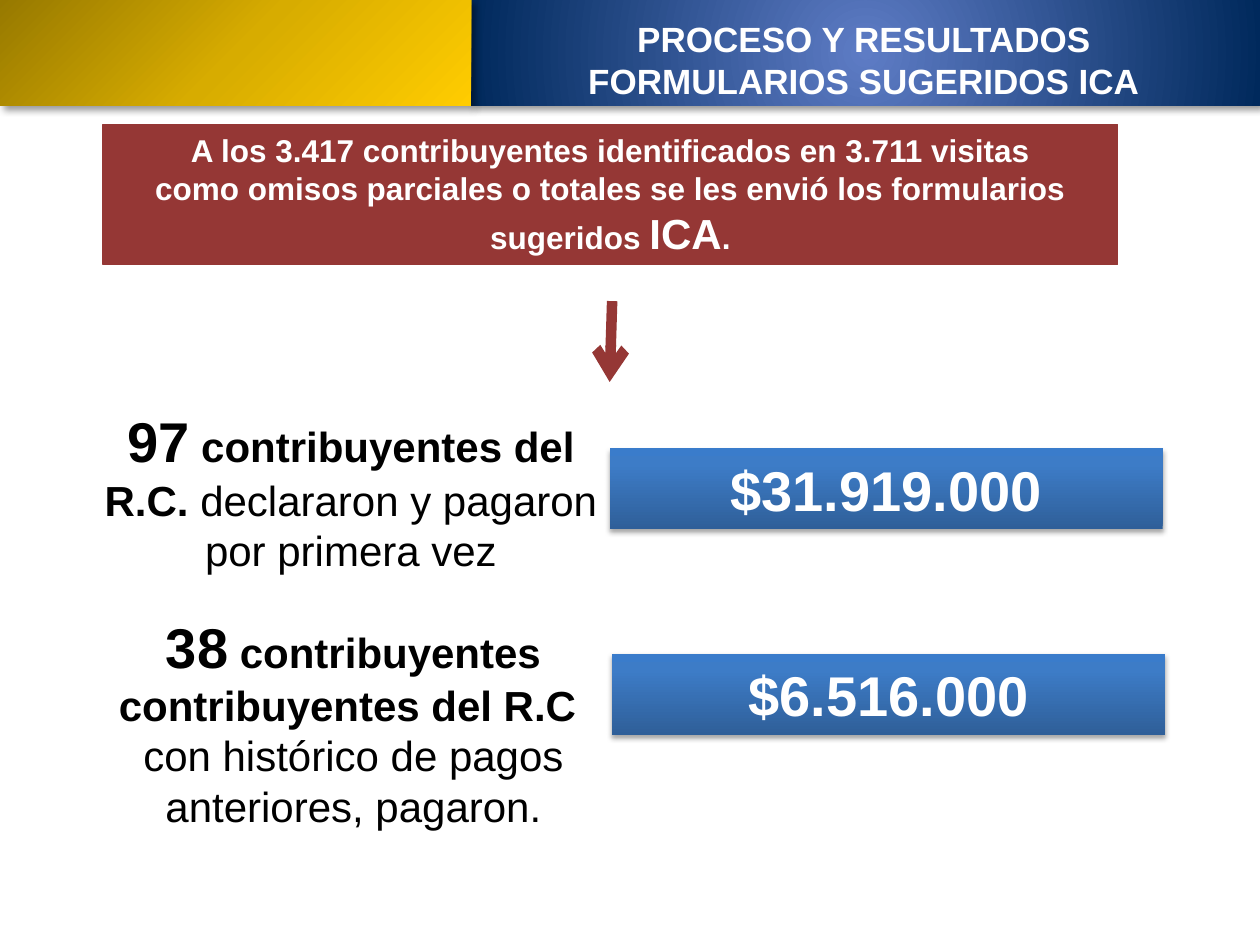
from pptx import Presentation
from pptx.dml.color import RGBColor
from pptx.enum.shapes import MSO_CONNECTOR as Connector, MSO_SHAPE as Shape
from pptx.enum.text import MSO_ANCHOR as Anchor, MSO_AUTO_SIZE as AutoSize, PP_ALIGN as Align
from pptx.oxml.ns import qn
from pptx.util import Cm, Pt
from lxml.etree import SubElement

WHITE = RGBColor(0xFF, 0xFF, 0xFF)
BLACK = RGBColor(0x00, 0x00, 0x00)
RED = RGBColor(0x95, 0x37, 0x35)
NAVY = RGBColor(0x00, 0x29, 0x5C)
SOFT_BLUE = RGBColor(0x5E, 0x7C, 0xC5)
DARK_GOLD = RGBColor(0x97, 0x79, 0x00)
MID_GOLD = RGBColor(0xD7, 0xAC, 0x00)
GOLD = RGBColor(0xFF, 0xCC, 0x00)
BAR_DARK = RGBColor(0x2F, 0x5F, 0x99)
BAR_MID = RGBColor(0x3D, 0x7C, 0xC7)
BAR_LIGHT = RGBColor(0x3A, 0x7C, 0xCB)

BAR_STOPS = [(0, BAR_DARK), (80, BAR_MID), (100, BAR_LIGHT)]
# Shadow: opacity %, blur pt, distance pt, angle
BAND_SHADOW = (40, 4, 3, 45)
BAR_SHADOW = (35, 3.1, 1.8, 90)


def add_xml(parent, tag, **attributes):
    return SubElement(parent, qn(tag), {k: str(v) for k, v in attributes.items()})


class SlideBuilder:
    font = "Arial"

    def __init__(self, slide):
        self.slide = slide

    def add_runs(self, frame, paragraphs, color):
        """Each paragraph is a list of runs: (text, size, bold)."""
        frame.word_wrap = True
        for i, runs in enumerate(paragraphs):
            paragraph = frame.paragraphs[0] if i == 0 else frame.add_paragraph()
            paragraph.alignment = Align.CENTER
            for text, size, bold in runs:
                run = paragraph.add_run()
                run.text = text
                run.font.name = self.font
                run.font.size = Pt(size)
                run.font.bold = bold
                run.font.color.rgb = color

    def text(self, left, top, width, height, paragraphs, color=BLACK):
        box = self.slide.shapes.add_textbox(Cm(left), Cm(top), Cm(width), Cm(height))
        self.add_runs(box.text_frame, paragraphs, color)
        box.text_frame.auto_size = AutoSize.SHAPE_TO_FIT_TEXT
        return box

    def box(self, left, top, width, height, paragraphs=()):
        box = self.slide.shapes.add_shape(
            Shape.RECTANGLE, Cm(left), Cm(top), Cm(width), Cm(height))
        box.shadow.inherit = False
        box.line.fill.background()
        box.text_frame.vertical_anchor = Anchor.MIDDLE
        self.add_runs(box.text_frame, paragraphs, WHITE)
        return box

    def solid_box(self, *place, paragraphs, color):
        box = self.box(*place, paragraphs)
        box.fill.solid()
        box.fill.fore_color.rgb = color
        box.line.color.rgb = color
        box.line.width = Pt(0.75)

    def gradient_box(self, *place, stops, shadow, focus=None, paragraphs=()):
        """focus is the centre of a round gradient in %; without it, bottom to top."""
        properties = self.box(*place, paragraphs)._element.spPr
        gradient = add_xml(properties, "a:gradFill", rotWithShape=1)
        properties.find(qn("a:prstGeom")).addnext(gradient)
        stop_list = add_xml(gradient, "a:gsLst")
        for position, color in stops:
            stop = add_xml(stop_list, "a:gs", pos=position * 1000)
            add_xml(stop, "a:srgbClr", val=color)
        if focus is None:
            add_xml(gradient, "a:lin", ang=270 * 60000, scaled=0)
        else:
            start, end = focus * 1000, (100 - focus) * 1000
            circle = add_xml(gradient, "a:path")
            circle.set("path", "circle")
            add_xml(circle, "a:fillToRect", l=start, t=start, r=end, b=end)
        opacity, blur, distance, angle = shadow
        outer = add_xml(properties.find(qn("a:effectLst")), "a:outerShdw",
                        blurRad=Pt(blur), dist=Pt(distance),
                        dir=angle * 60000, rotWithShape=0)
        shade = add_xml(outer, "a:srgbClr", val=BLACK)
        add_xml(shade, "a:alpha", val=opacity * 1000)

    def arrow(self, x1, y1, x2, y2, color, width):
        arrow = self.slide.shapes.add_connector(
            Connector.STRAIGHT, Cm(x1), Cm(y1), Cm(x2), Cm(y2))
        arrow.line.color.rgb = color
        arrow.line.width = Pt(width)
        properties = arrow._element.spPr
        add_xml(properties.find(qn("a:ln")), "a:tailEnd", type="arrow")
        add_xml(properties, "a:effectLst")


def main():
    deck = Presentation()
    deck.slide_width, deck.slide_height = Cm(25.4), Cm(19.05)
    page = SlideBuilder(deck.slides.add_slide(deck.slide_layouts[6]))

    # Header bands
    split, band_height = 9.5, 2.13
    page.gradient_box(split, 0, 25.4 - split, band_height, focus=50,
                      stops=[(0, SOFT_BLUE), (100, NAVY)], shadow=BAND_SHADOW)
    page.gradient_box(0, 0, split, band_height, focus=0, shadow=BAND_SHADOW,
                      stops=[(0, DARK_GOLD), (50, MID_GOLD), (100, GOLD)])

    # Title
    title = page.text(11.56, 0.23, 11.71, 1.96, [
        [("PROCESO Y RESULTADOS", 20, True)],
        [("FORMULARIOS SUGERIDOS ICA", 20, True)],
    ], WHITE)
    title.text_frame.word_wrap = False

    # Forms sent, and the arrow to the results
    page.solid_box(2.08, 2.51, 20.45, 2.82, color=RED, paragraphs=[
        [("A los 3.417 contribuyentes identificados en 3.711 visitas", 18, True)],
        [("como omisos parciales o totales se les envió los formularios sugeridos ", 18, True),
         ("ICA", 24, True), (".", 18, True)],
    ])
    page.arrow(12.34, 6.07, 12.29, 7.7, RED, 6)

    # Results: who paid, and how much
    results = [
        (3.68, "$31.919.000", [
            [("97", 32, True), (" contribuyentes del R.C. ", 24, True),
             ("declararon y pagaron por primera vez", 24, False)]]),
        (4.7, "$6.516.000", [
            [("38", 32, True), (" contribuyentes contribuyentes del R.C ", 24, True)],
            [("con histórico de pagos anteriores, pagaron.", 24, False)]]),
    ]
    for row, (height, amount, payers) in enumerate(results):
        shift, drop = row * 0.05, row * 4.14
        page.text(1.5 + shift, 8.08 + drop, 11.15, height, payers)
        page.gradient_box(12.29 + shift, 9.04 + drop, 11.15, 1.63,
                          stops=BAR_STOPS, shadow=BAR_SHADOW,
                          paragraphs=[[(amount, 32, True)]])

    deck.save("out.pptx")


if __name__ == "__main__":
    main()
